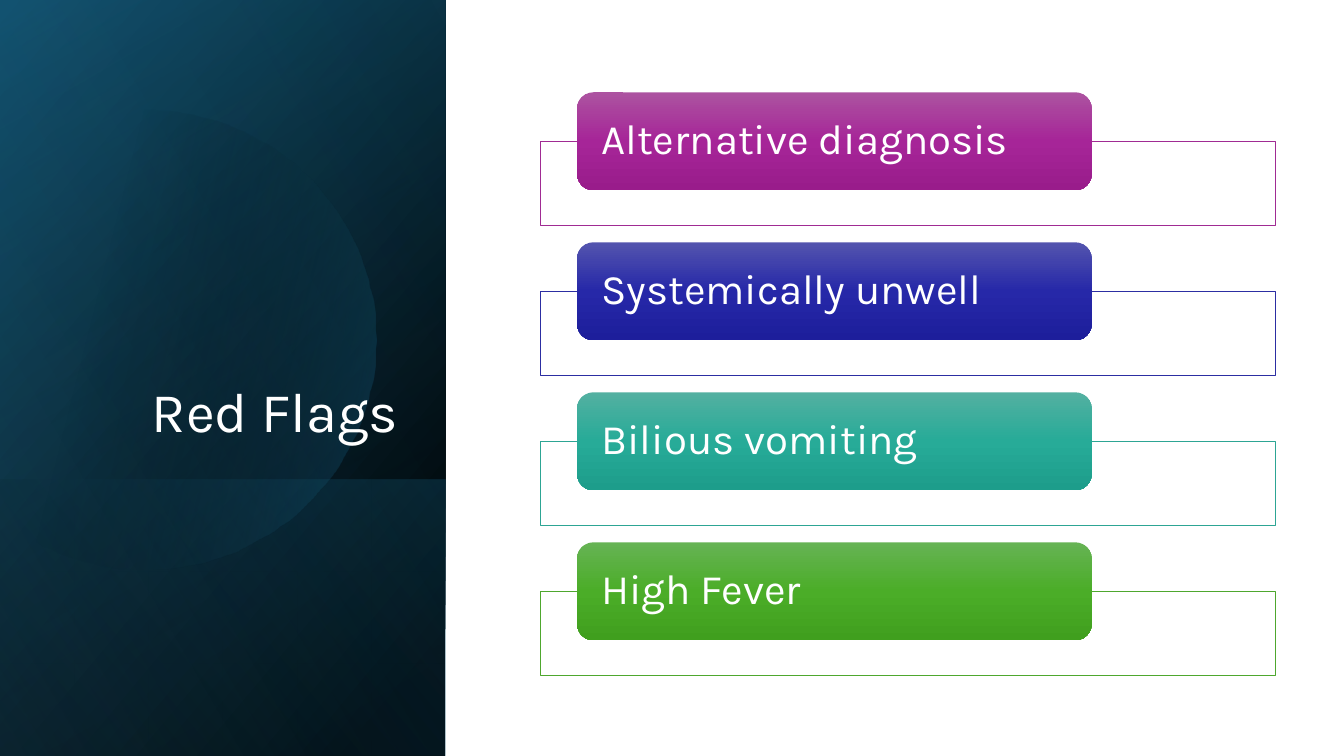
from math import acos, cos, radians, sin

from lxml import etree
from pptx import Presentation
from pptx.dml.color import RGBColor
from pptx.enum.shapes import MSO_SHAPE as SHAPE
from pptx.enum.text import MSO_ANCHOR as ANCHOR, PP_ALIGN as ALIGN
from pptx.oxml.ns import qn
from pptx.util import Pt

WHITE = RGBColor(0xFF, 0xFF, 0xFF)
BLACK = RGBColor(0x00, 0x00, 0x00)
TEAL = RGBColor(0x15, 0x60, 0x82)
DEEP_TEAL = RGBColor(0x10, 0x48, 0x62)
SKY = RGBColor(0x46, 0xB1, 0xE1)
PURPLE = RGBColor(0xA0, 0x2B, 0x93)
PURPLES = [RGBColor(0xAC, 0x53, 0xA0), RGBColor(0xA6, 0x25, 0x98), RGBColor(0x99, 0x1C, 0x8B)]
BLUE = RGBColor(0x2C, 0x2E, 0xA2)
BLUES = [RGBColor(0x53, 0x54, 0xAE), RGBColor(0x26, 0x28, 0xA8), RGBColor(0x1D, 0x1E, 0x9B)]
AQUA = RGBColor(0x2D, 0xA5, 0x94)
AQUAS = [RGBColor(0x53, 0xB0, 0xA1), RGBColor(0x27, 0xAB, 0x98), RGBColor(0x1D, 0x9D, 0x8B)]
GREEN = RGBColor(0x4E, 0xA7, 0x2E)
GREENS = [RGBColor(0x66, 0xB3, 0x54), RGBColor(0x4B, 0xAD, 0x28), RGBColor(0x40, 0x9F, 0x1E)]

FLAGS = [
    ("Alternative diagnosis", PURPLE, PURPLES),
    ("Systemically unwell", BLUE, BLUES),
    ("Bilious vomiting", AQUA, AQUAS),
    ("High Fever", GREEN, GREENS),
]


def set_alpha(clr, opacity):
    etree.SubElement(clr, qn("a:alpha"), val=str(opacity * 1000))


def set_gradient(sp, stops, angle):
    """Fill with (position, colour, opacity) stops, all but colour in percent."""
    sp.fill.solid()
    solid = sp.element.spPr.find(qn("a:solidFill"))
    grad = etree.Element(qn("a:gradFill"), rotWithShape="1")
    gs_list = etree.SubElement(grad, qn("a:gsLst"))
    for pos, color, opacity in stops:
        gs = etree.SubElement(gs_list, qn("a:gs"), pos=str(pos * 1000))
        clr = etree.SubElement(gs, qn("a:srgbClr"), val=str(color))
        if opacity < 100:
            set_alpha(clr, opacity)
    etree.SubElement(grad, qn("a:lin"), ang=str(angle * 60000), scaled="0")
    solid.getparent().replace(solid, grad)


def set_text(sp, text, size, color=WHITE, font="Karla", align=ALIGN.LEFT,
             anchor=ANCHOR.MIDDLE, margins=(7.2, 3.6)):
    tf = sp.text_frame
    tf.word_wrap = True
    tf.vertical_anchor = anchor
    tf.margin_left = tf.margin_right = Pt(margins[0])
    tf.margin_top = tf.margin_bottom = Pt(margins[1])
    p = tf.paragraphs[0]
    p.alignment = align
    p.line_spacing = 0.9
    r = p.add_run()
    r.text = text
    r.font.size = Pt(size)
    r.font.name = font
    r.font.color.rgb = color


def add_plain(s, kind, left, top, width, height):
    sp = s.shapes.add_shape(kind, Pt(left), Pt(top), Pt(width), Pt(height))
    sp.shadow.inherit = False
    sp.line.fill.background()
    return sp


def add_turned_panel(s, left, top, width, height, stops, angle):
    """Cover the given box with a mirrored rectangle turned by 90 degrees."""
    shift = (width - height) / 2
    sp = add_plain(s, SHAPE.RECTANGLE, left + shift, top - shift, height, width)
    sp.rotation = 90
    sp.element.spPr.find(qn("a:xfrm")).set("flipH", "1")
    set_gradient(sp, stops, angle)


def add_disc(s, left, center_x, center_y, radius):
    """Draw a disc cut off straight at the left edge."""
    half_arc = acos((left - center_x) / radius)
    steps = 120
    angles = [half_arc * (2 * i / steps - 1) for i in range(steps + 1)]
    points = [(center_x + radius * cos(a), center_y + radius * sin(a)) for a in angles]
    builder = s.shapes.build_freeform(*points[0], scale=Pt(1))
    builder.add_line_segments(points[1:], close=True)
    sp = builder.convert_to_shape()
    sp.shadow.inherit = False
    sp.line.fill.background()
    set_gradient(sp, [(29, BLACK, 0), (100, TEAL, 43)], 14)


def add_side_panel(s, left, top, width, height):
    box = (left, top, width, height)
    low = 197.3
    add_turned_panel(s, *box, [(8, BLACK, 100), (100, DEEP_TEAL, 100)], 50)
    add_turned_panel(s, *box, [(0, BLACK, 0), (99, TEAL, 46)], 30)
    add_turned_panel(s, left, top + height - low, width, low,
                     [(2, TEAL, 29), (100, BLACK, 30)], 130)
    add_disc(s, left, left + 104.4, top + 242.6, 164.2)
    add_turned_panel(s, *box, [(0, BLACK, 0), (99, SKY, 11)], 120)

    title = s.shapes.title
    title.left, title.top = Pt(left + 46), Pt(top + 132.5)
    title.width, title.height = Pt(245.5), Pt(188.6)
    set_text(title, "Red Flags", 40, align=ALIGN.RIGHT, anchor=ANCHOR.BOTTOM)
    tree = title.element.getparent()
    tree.remove(title.element)
    tree.append(title.element)


def add_flag(s, left, top, width, text, color, shades):
    label_height = 70
    frame = add_plain(s, SHAPE.RECTANGLE, left, top + label_height / 2, width, 60)
    frame.fill.solid()
    frame.fill.fore_color.rgb = WHITE
    set_alpha(frame.element.spPr.find(qn("a:solidFill"))[0], 90)
    frame.line.color.rgb = color
    frame.line.width = Pt(1)

    label = add_plain(s, SHAPE.ROUNDED_RECTANGLE, left + width * 0.05, top,
                      width * 0.7, label_height)
    set_gradient(label, [(50 * i, shade, 100) for i, shade in enumerate(shades)], 90)
    set_text(label, text, 30, margins=(13.9, 0))


def add_flag_list(s, left, top, width, step):
    for i, flag in enumerate(FLAGS):
        add_flag(s, left, top + i * step, width, *flag)


def main():
    prs = Presentation()
    prs.slide_width, prs.slide_height = Pt(960), Pt(540)
    s = prs.slides.add_slide(prs.slide_layouts[5])
    add_side_panel(s, 0, 0, 318.2, 540)
    add_flag_list(s, 386, 65.9, 525, 107.15)
    prs.save("out.pptx")


if __name__ == "__main__":
    main()
